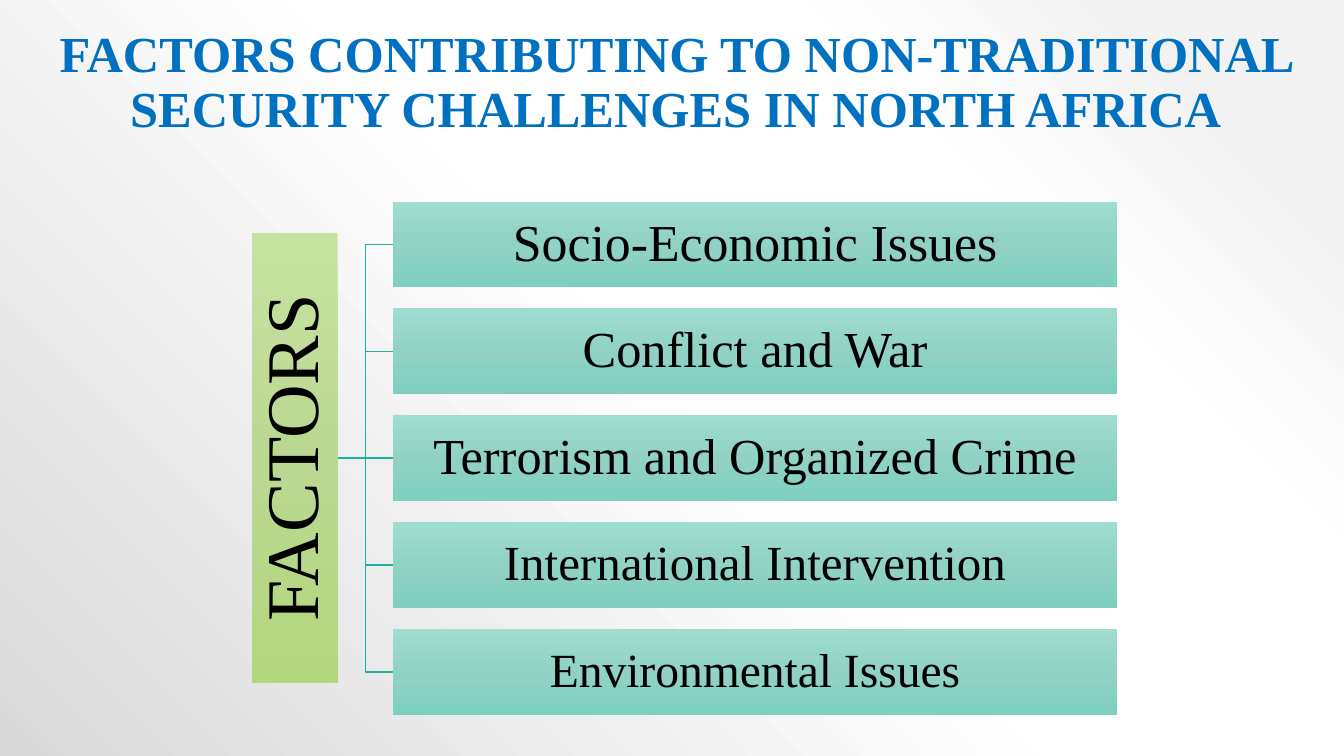
from lxml import etree
from pptx import Presentation
from pptx import util as u
from pptx.dml.color import RGBColor
from pptx.enum import shapes, text
from pptx.oxml import parse_xml
from pptx.oxml.ns import nsdecls, qn

THEME = dict(
    font="Times New Roman", title="0070C0", ink="000000", line="1AB39F",
    title_size=36, root_size=53,
    root=[(0, "C6E29F"), (50, "BBD892"), (100, "B3D77D")],
    box=[(0, "9EDDD0"), (50, "91D2C5"), (100, "7DD0C0")],
    page=[(10, "F2F2F2"), (28, "FFFFFF"), (48, "FFFFFF"), (100, "D9D9D9")],
)
DOWN = '<a:lin {} ang="5400000" scaled="0"/>'
CORNER = '<a:path {} path="circle"><a:fillToRect l="100000" b="100000"/></a:path>'


def set_gradient(fill, element, stops, direction):
    """Fill with the given (percent, colour) stops."""
    fill.gradient()
    grad = element.find(".//" + qn("a:gradFill"))
    for child in list(grad):
        grad.remove(child)
    grad.set("rotWithShape", "0")
    gs_list = etree.SubElement(grad, qn("a:gsLst"))
    for pos, color in stops:
        gs = etree.SubElement(gs_list, qn("a:gs"), pos=str(pos * 1000))
        etree.SubElement(gs, qn("a:srgbClr"), val=color)
    grad.append(parse_xml(direction.format(nsdecls("a"))))


def write(sp, words, size, color, anchor, inset, bold=False):
    """Put one centred line of text in a shape."""
    tf = sp.text_frame
    tf.word_wrap = True
    tf.auto_size = text.MSO_AUTO_SIZE.NONE
    tf.vertical_anchor = anchor
    tf.margin_left = tf.margin_right = u.Inches(inset)
    tf.margin_top = tf.margin_bottom = u.Inches(min(inset, 0.05))
    p = tf.paragraphs[0]
    p.alignment = text.PP_ALIGN.CENTER
    p.line_spacing = 0.9
    r = p.add_run()
    r.text = words
    r.font.name = THEME["font"]
    r.font.size = u.Pt(size)
    r.font.bold = bold
    r.font.color.rgb = RGBColor.from_string(color)


prs = Presentation()
prs.slide_width, prs.slide_height = u.Inches(13.33), u.Inches(7.5)
s = prs.slides.add_slide(prs.slide_layouts[5])
set_gradient(s.background.fill, s.element, THEME["page"], CORNER)

# Title
title = s.shapes.title
title.left, title.top = u.Inches(0.33), u.Inches(0.3)
title.width, title.height = u.Inches(12.75), u.Inches(1.12)
write(title, "FACTORS CONTRIBUTING TO NON-TRADITIONAL SECURITY CHALLENGES IN NORTH AFRICA",
      THEME["title_size"], THEME["title"], text.MSO_ANCHOR.BOTTOM, 0.1, bold=True)

# Tree grid: one row for each factor, the root centred on the middle row
factors = [("Socio-Economic Issues", 37), ("Conflict and War", 36),
           ("Terrorism and Organized Crime", 36),
           ("International Intervention", 35), ("Environmental Issues", 34)]
top, pitch, bar = 2, 1.06, 0.85
root_right, box_left, box_width, root_length = 3.35, 3.9, 7.18, 4.46
elbow = (root_right + box_left) / 2
rows = [top + i * pitch for i in range(len(factors))]
middle = rows[len(rows) // 2] + bar / 2

# Branches from the root to each factor
for row in rows:
    y = row + bar / 2
    points = [(elbow, middle), (elbow, y), (box_left, y)]
    if y == middle:
        points = [(box_left, y)]
    fb = s.shapes.build_freeform(u.Inches(root_right), u.Inches(middle))
    fb.add_line_segments([(u.Inches(a), u.Inches(b)) for a, b in points], close=False)
    branch = fb.convert_to_shape()
    branch.shadow.inherit = False
    branch.fill.background()
    branch.line.color.rgb = RGBColor.from_string(THEME["line"])
    branch.line.width = u.Pt(1)

# Root, turned a quarter to the left, then the factor boxes
bars = [("FACTORS", THEME["root_size"], THEME["root"], 270,
         root_right - bar / 2 - root_length / 2, middle - bar / 2, root_length)]
bars += [(words, size, THEME["box"], 0, box_left, row, box_width)
         for (words, size), row in zip(factors, rows)]
for words, size, stops, turn, left, y, width in bars:
    sp = s.shapes.add_shape(shapes.MSO_SHAPE.RECTANGLE, u.Inches(left), u.Inches(y),
                            u.Inches(width), u.Inches(bar))
    sp.rotation = turn
    sp.shadow.inherit = False
    sp.line.fill.background()
    set_gradient(sp.fill, sp.element, stops, DOWN)
    write(sp, words, size, THEME["ink"], text.MSO_ANCHOR.MIDDLE, 0.03)

prs.save("out.pptx")
